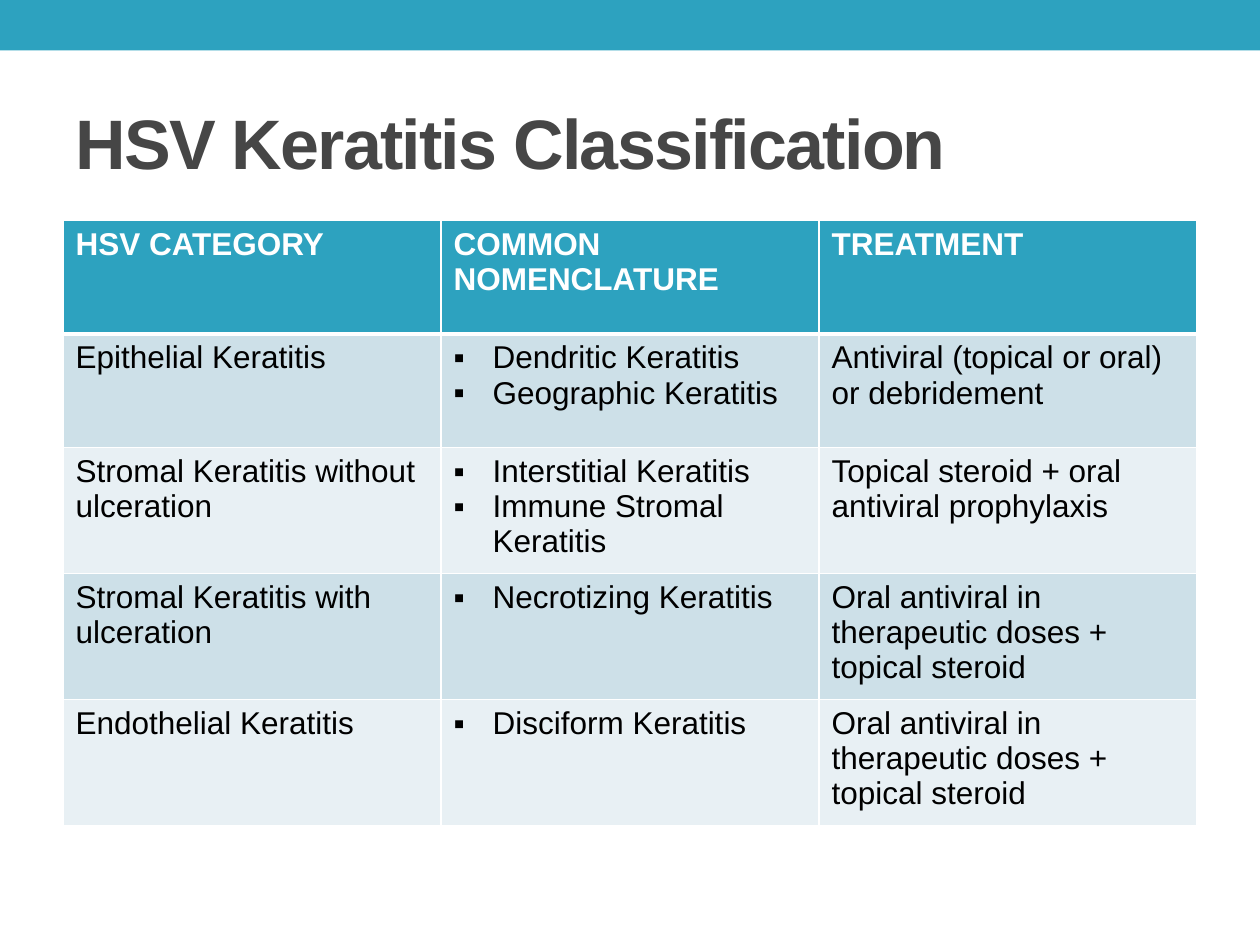
from pptx import Presentation
from pptx import util as u
from pptx.dml.color import RGBColor
from pptx.enum import shapes, text
from pptx.oxml.ns import qn
from lxml import etree

TEAL, WHITE, BLACK, GREY = "2DA2BF", "FFFFFF", "000000", "464646"
BANDS = ["CDE0E8", "E8F0F4"]
INDENT = u.Inches(0.31)

HEADER = ["HSV CATEGORY", "COMMON NOMENCLATURE", "TREATMENT"]
ORAL_PLUS_STEROID = "Oral antiviral in therapeutic doses + topical steroid"
ROWS = [
    ["Epithelial Keratitis", ["Dendritic Keratitis", "Geographic Keratitis"],
     "Antiviral (topical or oral) or debridement"],
    ["Stromal Keratitis without ulceration",
     ["Interstitial Keratitis", "Immune Stromal Keratitis"],
     "Topical steroid + oral antiviral prophylaxis"],
    ["Stromal Keratitis with ulceration", ["Necrotizing Keratitis"], ORAL_PLUS_STEROID],
    ["Endothelial Keratitis", ["Disciform Keratitis"], ORAL_PLUS_STEROID],
]
ROW_HEIGHTS = [0.9, 0.9, 0.94, 0.94, 0.94]


def color(value):
    return RGBColor.from_string(value)


class SlideBuilder:
    """Holds the slide and its style; lengths are in inches on a 10 x 7.5 slide."""

    def __init__(self, slide, font="Arial"):
        self.slide = slide
        self.font = font

    def style(self, paragraph, size, fill, bold=False, spacing=None):
        for run in paragraph.runs:
            run.font.name = self.font
            run.font.size = u.Pt(size)
            run.font.bold = bold
            run.font.color.rgb = color(fill)
            if spacing is not None:
                run._r.get_or_add_rPr().set("spc", str(spacing * 100))

    def band(self, box, fill):
        shape = self.slide.shapes.add_shape(
            shapes.MSO_SHAPE.RECTANGLE, *map(u.Inches, box))
        shape.shadow.inherit = False
        shape.fill.solid()
        shape.fill.fore_color.rgb = color(fill)
        shape.line.fill.background()

    def title(self, box, words):
        frame = self.slide.shapes.add_textbox(*map(u.Inches, box)).text_frame
        frame.word_wrap = True
        frame.vertical_anchor = text.MSO_ANCHOR.MIDDLE
        frame.text = words
        self.style(frame.paragraphs[0], 40, GREY, bold=True, spacing=-1)

    def bullet(self, paragraph):
        properties = paragraph._p.get_or_add_pPr()
        properties.set("marL", str(INDENT))
        properties.set("indent", str(-INDENT))
        etree.SubElement(properties, qn("a:buFont")).set("typeface", self.font)
        etree.SubElement(properties, qn("a:buChar")).set("char", "▪")

    def borders(self, cell, widths):
        properties = cell._tc.get_or_add_tcPr()
        for side, width in widths.items():
            line = etree.SubElement(properties, qn(f"a:ln{side}"), w=str(u.Pt(width)))
            fill = etree.SubElement(line, qn("a:solidFill"))
            etree.SubElement(fill, qn("a:srgbClr")).set("val", WHITE)

    def cell(self, cell, content, fill, ink, bold, widths):
        self.borders(cell, widths)
        cell.fill.solid()
        cell.fill.fore_color.rgb = color(fill)
        bulleted = isinstance(content, list)
        cell.text_frame.text = "\n".join(content) if bulleted else content
        for paragraph in cell.text_frame.paragraphs:
            if bulleted:
                self.bullet(paragraph)
            self.style(paragraph, 18, ink, bold)

    def table(self, left, top, width, heights, rows):
        columns = len(rows[0])
        table = self.slide.shapes.add_table(
            len(rows), columns, u.Inches(left), u.Inches(top),
            u.Inches(width), u.Inches(sum(heights))).table
        for column in table.columns:
            column.width = u.Inches(width / columns)
        for r, (height, row) in enumerate(zip(heights, rows)):
            table.rows[r].height = u.Inches(height)
            header = r == 0
            fill = TEAL if header else BANDS[(r - 1) % 2]
            # The rule under the header is the only thick one
            widths = {"L": 1, "R": 1, "T": 3 if r == 1 else 1, "B": 3 if header else 1}
            for c, content in enumerate(row):
                self.cell(table.cell(r, c), content, fill,
                          WHITE if header else BLACK, header, widths)


def main():
    presentation = Presentation()
    presentation.slide_width = u.Inches(10)
    presentation.slide_height = u.Inches(7.5)
    builder = SlideBuilder(presentation.slides.add_slide(presentation.slide_layouts[6]))

    # Top band and title
    builder.band((0, 0, 10, 0.4), TEAL)
    builder.title((0.5, 0.58, 9, 1.08), "HSV Keratitis Classification")

    # Classification table
    builder.table(0.5, 1.75, 9, ROW_HEIGHTS, [HEADER] + ROWS)

    presentation.save("out.pptx")


if __name__ == "__main__":
    main()
